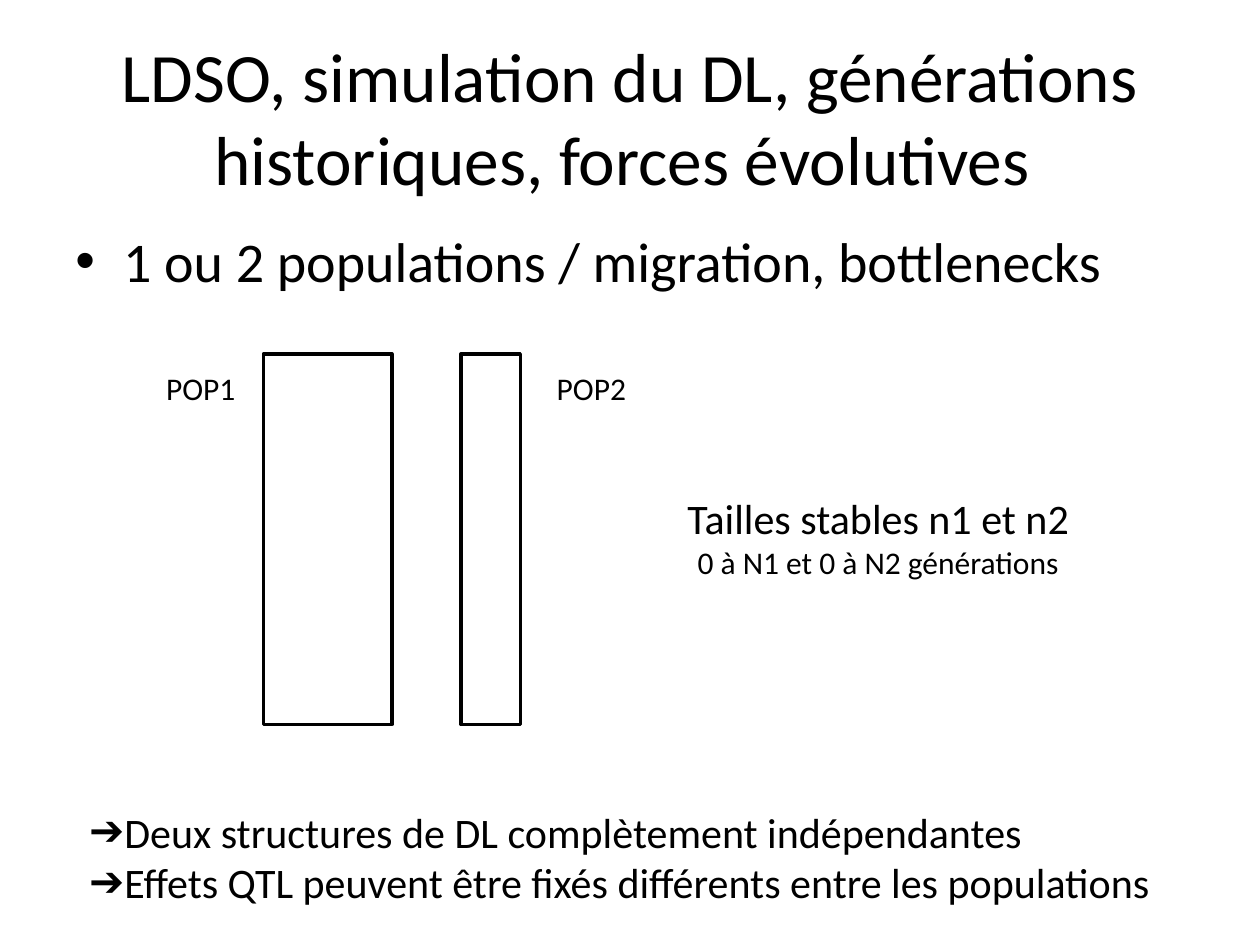
from lxml import etree
from pptx import Presentation
from pptx.dml.color import RGBColor
from pptx.enum.shapes import MSO_SHAPE
from pptx.enum.text import MSO_ANCHOR, PP_ALIGN
from pptx.oxml.ns import qn
from pptx.util import Inches, Pt

RECTANGLE = MSO_SHAPE.RECTANGLE
LEFT, CENTER = PP_ALIGN.LEFT, PP_ALIGN.CENTER
TOP, MIDDLE = MSO_ANCHOR.TOP, MSO_ANCHOR.MIDDLE
BLACK, WHITE = "000000", "FFFFFF"


def rgb(value):
    return RGBColor.from_string(value)


class SlideBuilder:
    font = "Calibri"
    ink = BLACK
    paper = WHITE
    outline = 2

    def __init__(self, slide):
        self.slide = slide
        slide.background.fill.solid()
        slide.background.fill.fore_color.rgb = rgb(self.paper)

    def text(self, box, lines, align=LEFT, anchor=TOP, wrap=False,
             bullet=None, indent=0, space_before=0):
        """Add a text box; lines is a list of (text, size) pairs."""
        frame = self.slide.shapes.add_textbox(*map(Inches, box)).text_frame
        frame.word_wrap = wrap
        frame.vertical_anchor = anchor
        for index, (words, size) in enumerate(lines):
            paragraph = frame.paragraphs[0] if index == 0 else frame.add_paragraph()
            paragraph.alignment = align
            paragraph.space_before = Pt(space_before)
            run = paragraph.add_run()
            run.text = words
            formats = {"name": self.font, "size": Pt(size)}
            for attribute, value in formats.items():
                setattr(run.font, attribute, value)
            run.font.color.rgb = rgb(self.ink)
            if bullet:
                self.bullet(paragraph, bullet, indent)

    def bullet(self, paragraph, symbol, indent):
        properties = paragraph._p.get_or_add_pPr()
        properties.set("marL", str(Inches(indent)))
        properties.set("indent", str(-Inches(indent)))
        etree.SubElement(properties, qn("a:buFont")).set("typeface", "Arial")
        etree.SubElement(properties, qn("a:buChar")).set("char", symbol)

    def rectangle(self, box):
        shape = self.slide.shapes.add_shape(RECTANGLE, *map(Inches, box))
        shape.shadow.inherit = False
        shape.fill.solid()
        shape.fill.fore_color.rgb = rgb(self.paper)
        shape.line.color.rgb = rgb(self.ink)
        shape.line.width = Pt(self.outline)


def main():
    presentation = Presentation()
    presentation.slide_width = Inches(10)
    presentation.slide_height = Inches(7.5)
    builder = SlideBuilder(
        presentation.slides.add_slide(presentation.slide_layouts[6]))

    # Title and topic
    builder.text((0.5, 0.3, 9, 1.25),
                 [("LDSO, simulation du DL, générations historiques, "
                   "forces évolutives ", 39.6)],
                 align=CENTER, anchor=MIDDLE, wrap=True)
    builder.text((0.5, 1.75, 9, 4.95),
                 [("1 ou 2 populations / migration, bottlenecks", 32)],
                 wrap=True, bullet="•", indent=0.38, space_before=6.4)

    # Populations: bar width stands for population size
    populations = [("POP1", 1.22, 2.09, 1.02), ("POP2", 4.32, 3.66, 0.47)]
    for population, label_left, bar_left, bar_width in populations:
        builder.rectangle((bar_left, 2.81, bar_width, 2.94))
        builder.text((label_left, 2.88, 0.76, 0.4), [(population, 18)])

    # Sizes and generations
    builder.text((5.34, 3.86, 3.26, 0.81),
                 [("Tailles stables n1 et n2", 24),
                  ("0 à N1 et 0 à N2 générations", 18)],
                 align=CENTER)

    # Consequences
    builder.text((0.61, 6.35, 8.8, 0.91),
                 [("Deux structures de DL complètement indépendantes", 24),
                  ("Effets QTL peuvent être fixés différents entre les populations", 24)],
                 bullet="➔")

    presentation.save("out.pptx")


if __name__ == "__main__":
    main()
